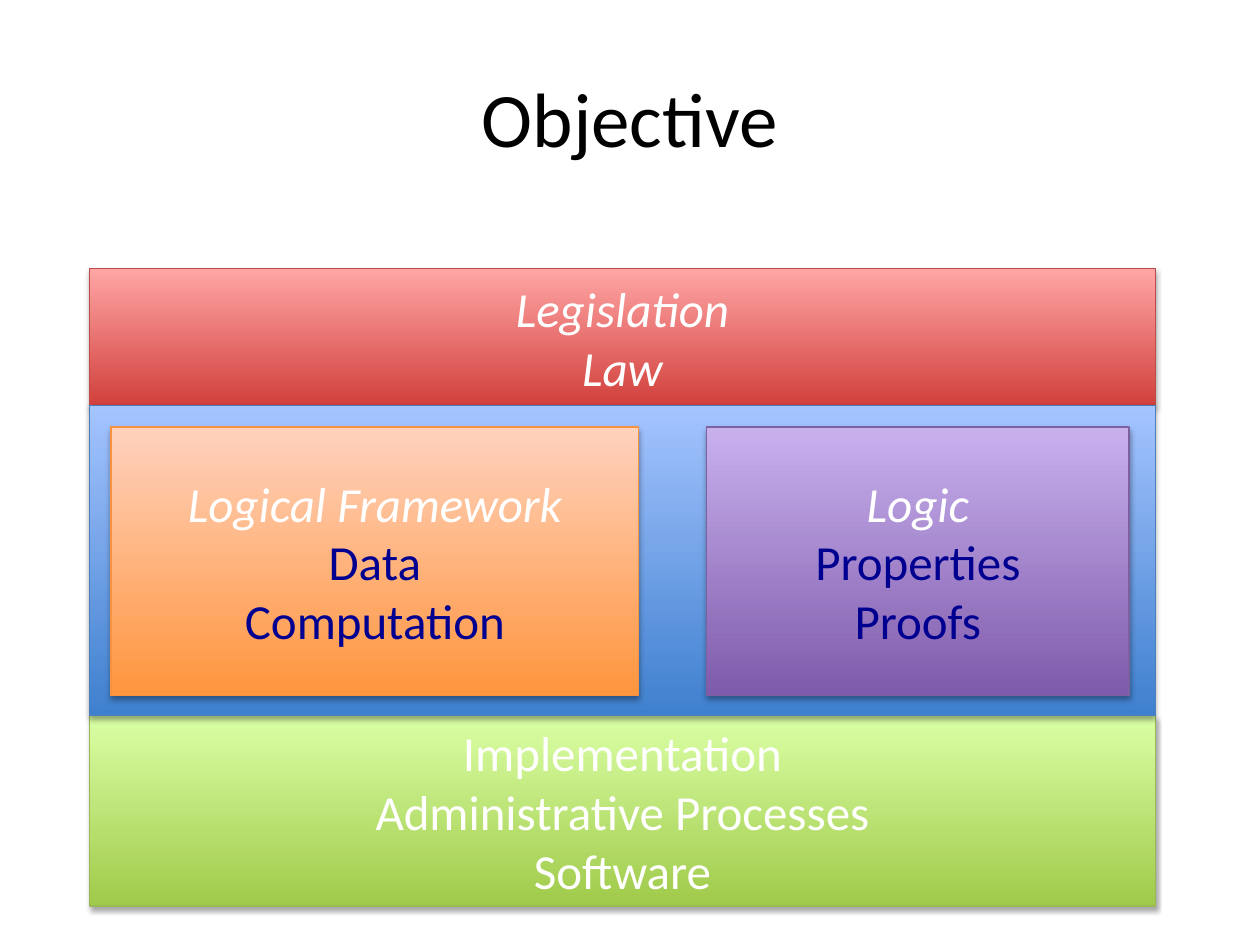
"""Build the Objective slide: stacked layers from legislation to software."""
from lxml.etree import SubElement
from pptx import Presentation
from pptx.dml.color import RGBColor
from pptx.enum.shapes import MSO_SHAPE
from pptx.enum.text import MSO_ANCHOR, PP_ALIGN
from pptx.oxml.ns import qn
from pptx.util import Pt

PX = 9144
WHITE, NAVY = "FFFFFF", "000090"


def rgb(value):
    return RGBColor.from_string(value)


def add_text(tf, text, size=28, color=WHITE, italic=False, first=False):
    p = tf.paragraphs[0] if first else tf.add_paragraph()
    p.alignment = PP_ALIGN.CENTER
    r = p.add_run()
    r.text = text
    r.font.name = "Calibri"
    r.font.size = Pt(size)
    r.font.italic = italic
    r.font.color.rgb = rgb(color)


prs = Presentation()
prs.slide_width, prs.slide_height = 1000 * PX, 750 * PX
s = prs.slides.add_slide(prs.slide_layouts[5])

title = s.shapes.title
title.left, title.top, title.width, title.height = [v * PX for v in (50, 30, 900, 125)]
title.text_frame.vertical_anchor = MSO_ANCHOR.MIDDLE
add_text(title.text_frame, "Objective", size=44, color="000000", first=True)

boxes = [
    ((71, 568, 846, 151), "A0CA4A", "DAFFA5", "98B955",
     [("Implementation", WHITE, False), ("Administrative Processes", WHITE, False),
      ("Software", WHITE, False)]),
    ((71, 213, 846, 109), "D1403C", "FFA6A5", "BF4C48",
     [("Legislation", WHITE, True), ("Law", WHITE, True)]),
    ((71, 322, 846, 246), "3F80CE", "A4C4FF", "4B7EBC", []),
    ((88, 339, 419, 213), "FF953E", "FFD2BD", "F69240",
     [("Logical Framework", WHITE, True), ("Data", NAVY, False),
      ("Computation", NAVY, False)]),
    ((561, 339, 335, 213), "7F5BAB", "C8B0ED", "7D60A0",
     [("Logic", WHITE, True), ("Properties", NAVY, False), ("Proofs", NAVY, False)]),
]

for box, dark, light, line, lines in boxes:
    sp = s.shapes.add_shape(MSO_SHAPE.RECTANGLE, *[v * PX for v in box])
    sp.fill.gradient()
    sp.fill.gradient_angle = 90
    for stop, color, position in zip(sp.fill.gradient_stops, (dark, light), (0, 1)):
        stop.color.rgb = rgb(color)
        stop.position = position
    sp.line.color.rgb = rgb(line)
    sp.line.width = Pt(0.75)

    sp.shadow.inherit = False
    effects = sp.element.spPr.find(qn("a:effectLst"))
    shadow = SubElement(effects, qn("a:outerShdw"), blurRad="40000", dist="23000",
                        dir="5400000", rotWithShape="0")
    black = SubElement(shadow, qn("a:srgbClr"), val="000000")
    SubElement(black, qn("a:alpha"), val="35000")

    tf = sp.text_frame
    tf.word_wrap = True
    tf.vertical_anchor = MSO_ANCHOR.MIDDLE
    for i, (text, color, italic) in enumerate(lines):
        add_text(tf, text, color=color, italic=italic, first=i == 0)

prs.save("out.pptx")
